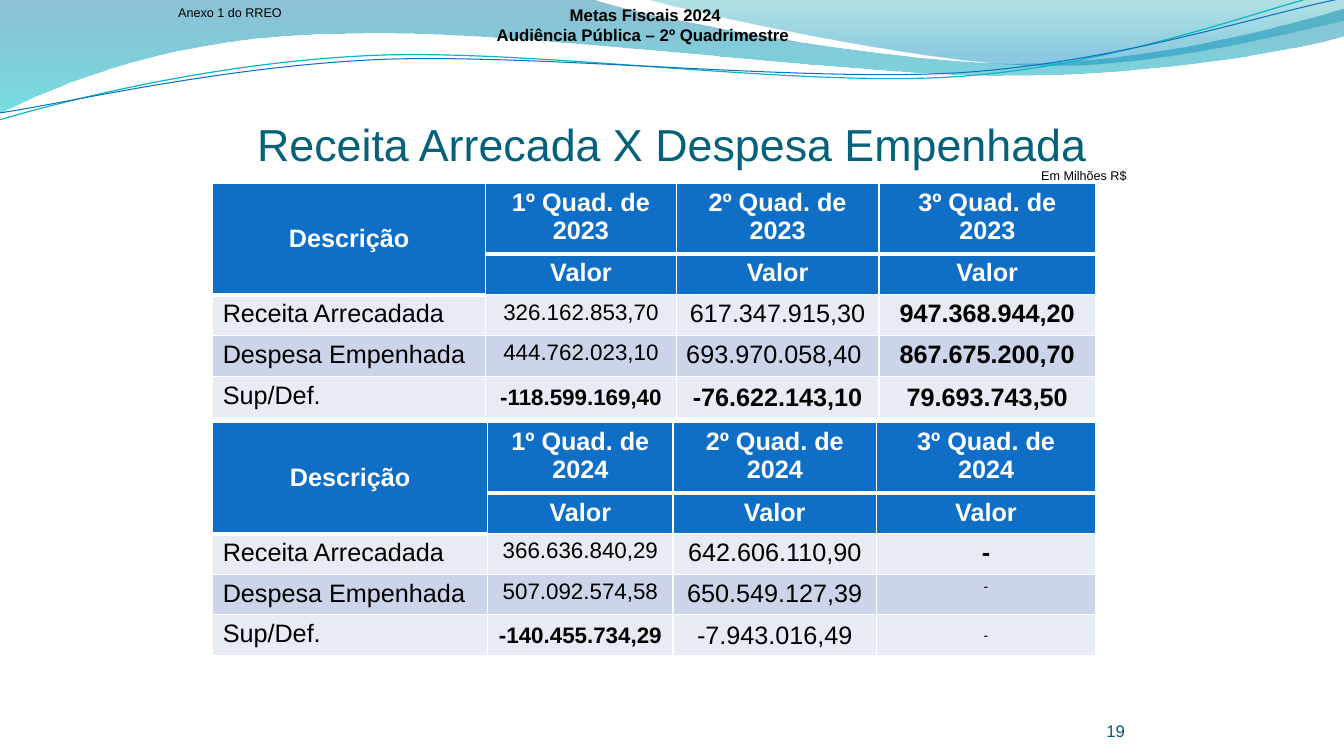
from lxml import etree
from pptx import Presentation
from pptx.dml.color import RGBColor
from pptx.enum.text import MSO_ANCHOR, MSO_AUTO_SIZE, PP_ALIGN
from pptx.oxml.ns import qn
from pptx.util import Cm, Pt

LEFT, CENTER, RIGHT = PP_ALIGN.LEFT, PP_ALIGN.CENTER, PP_ALIGN.RIGHT
TOP, MIDDLE, BOTTOM = MSO_ANCHOR.TOP, MSO_ANCHOR.MIDDLE, MSO_ANCHOR.BOTTOM
COLORS = {
    "header": "0F6FC6", "light": "E7EBF4", "band": "CCD4EA", "white": "FFFFFF",
    "black": "000000", "title": "04617B", "number": "035C75",
    "deep blue": "0074A0", "cyan": "00C4CD", "sky blue": "008ABF", "teal": "00A0A8",
    "turquoise": "09B7BF",
}
FONT = "Arial"
CM_PER_INCH = 2.54  # wave points are in inches


def write_text(frame, lines, size, color, bold=False, align=LEFT, anchor=TOP):
    frame.text = "\n".join(lines)
    frame.vertical_anchor = anchor
    for paragraph in frame.paragraphs:
        paragraph.alignment = align
        font = paragraph.font
        font.name, font.size, font.bold = FONT, Pt(size), bold
        font.color.rgb = RGBColor.from_string(COLORS[color])


def draw_wave(segments, close):
    """Draw segments of one point (line) or three points (Bézier curve)."""
    start, *points = [tuple(Cm(value * CM_PER_INCH) for value in point)
                      for segment in segments for point in segment]
    builder = slide.shapes.build_freeform(*start, scale=1.0)
    builder.add_line_segments(points, close=close)
    shape = builder.convert_to_shape()
    shape.shadow.inherit = False
    # Join each group of three line ends into one curve
    lines = iter(list(shape._element.iter(qn("a:lnTo"))))
    for segment in segments[1:]:
        first, *others = [next(lines) for _ in segment]
        if others:
            first.tag = qn("a:cubicBezTo")
            for line in others:
                first.append(line[0])
                line.getparent().remove(line)
    return shape


presentation = Presentation()
presentation.slide_width, presentation.slide_height = Cm(33.87), Cm(19.05)
slide = presentation.slides.add_slide(presentation.slide_layouts[5])

# Filled waves: outline, gradient angle, stops (position, colour, opacity %)
filled_waves = [
    ([[(0, 0)], [(5.87, -0.01)],
      [(6.34, 0.17), (8.85, 0.63), (10.11, 0.63)],
      [(11.37, 0.63), (12.78, 0.26), (13.33, 0.09)], [(13.35, 0.36)],
      [(13.11, 0.44), (11.6, 0.76), (9.94, 0.75)],
      [(8.29, 0.75), (5.09, 0.28), (3.43, 0.34)],
      [(1.72, 0.35), (0.61, 0.83), (-0.01, 1.13)]],
     270, [(0, "deep blue", 45), (1, "cyan", 55)]),
    ([[(6.39, -0.01)],
      [(6.79, 0.11), (9.09, 0.62), (10.25, 0.65)],
      [(11.41, 0.69), (12.82, 0.32), (13.33, 0.21)], [(13.33, 0)]],
     90, [(0.2, "sky blue", 45), (1, "teal", 30)]),
]
for segments, angle, stops in filled_waves:
    wave = draw_wave(segments, close=True)
    wave.line.fill.background()
    wave.fill.gradient()
    wave.fill.gradient_angle = angle
    for stop, (position, color, _) in zip(wave.fill.gradient_stops, stops):
        stop.position = position
        stop.color.rgb = RGBColor.from_string(COLORS[color])
    stop_colors = list(wave._element.spPr.iter(qn("a:srgbClr")))
    for element, (_, _, opacity) in zip(stop_colors, stops):
        etree.SubElement(element, qn("a:alpha"), val=str(opacity * 1000))

# Thin wave lines
wave_lines = [
    ([[(-0.01, 1.19)],
      [(0.64, 1), (2.11, 0.62), (3.69, 0.55)],
      [(5.27, 0.48), (7.9, 0.87), (9.5, 0.76)],
      [(11.1, 0.65), (12.52, 0.08), (13.31, -0.1)]], "turquoise", 0.85),
    ([[(0, 1.12)],
      [(0.63, 1.03), (2.18, 0.66), (3.78, 0.59)],
      [(5.37, 0.53), (7.96, 0.82), (9.55, 0.72)],
      [(11.15, 0.61), (12.55, 0.13), (13.34, -0.02)]], "header", 0.75),
]
for segments, color, width in wave_lines:
    wave = draw_wave(segments, close=False)
    wave.fill.background()
    wave.line.color.rgb = RGBColor.from_string(COLORS[color])
    wave.line.width = Pt(width)

# Title
title = slide.shapes.title
title.left, title.top, title.width, title.height = Cm(5.51), Cm(1.96), Cm(22.86), Cm(3.18)
frame = title.text_frame
frame.word_wrap, frame.auto_size = True, MSO_AUTO_SIZE.NONE
frame.margin_left = frame.margin_right = frame.margin_bottom = 0
write_text(frame, ["Receita Arrecada X Despesa Empenhada"], 32, "title",
           align=CENTER, anchor=MIDDLE)

# Small texts: box, lines, size, colour, bold, alignment, anchor
small_texts = [
    ((25.98, 4.11, 2.67, 0.64), ["Em Milhões R$"], 9, "black", False, CENTER, TOP),
    ((4.24, 0, 3.45, 0.64), ["Anexo 1 do RREO"], 9, "black", False, LEFT, TOP),
    ((11.96, 0, 8.61, 1.27), ["Metas Fiscais 2024", "Audiência Pública – 2º Quadrimestre "],
     12, "black", True, CENTER, MIDDLE),
    ((26.24, 17.65, 2.11, 1.02), ["19"], 12, "number", False, RIGHT, BOTTOM),
]
for box, lines, *style in small_texts:
    frame = slide.shapes.add_textbox(*map(Cm, box)).text_frame
    frame.word_wrap = True
    write_text(frame, lines, *style)
# The slide number, last in the list, has no margins
frame.margin_left = frame.margin_right = frame.margin_top = frame.margin_bottom = 0

# Tables: year, top, row height, column widths, values (text, size, bold)
tables = [
    (2023, 4.62, 1.03, (6.88, 4.8, 5.11, 5.46), [
        [("326.162.853,70", 16, False), ("617.347.915,30", 18, False), ("947.368.944,20", 18, True)],
        [("444.762.023,10", 16, False), ("693.970.058,40", 18, False), ("867.675.200,70", 18, True)],
        [("-118.599.169,40", 16, True), ("-76.622.143,10", 18, True), ("79.693.743,50", 18, True)],
    ]),
    (2024, 10.65, 1.02, (6.93, 4.67, 5.13, 5.52), [
        [("366.636.840,29", 16, False), ("642.606.110,90", 18, False), ("-", 18, True)],
        [("507.092.574,58", 16, False), ("650.549.127,39", 18, False), ("-", 10, False)],
        [("-140.455.734,29", 16, True), ("-7.943.016,49", 18, False), ("-", 10, False)],
    ]),
]
labels = ["Receita Arrecadada", "Despesa Empenhada", "Sup/Def."]
HEADER_HEIGHT = 1.75
for year, top, row_height, widths, values in tables:
    heights = [HEADER_HEIGHT] + [row_height] * 4
    table = slide.shapes.add_table(5, 4, Cm(5.36), Cm(top), Cm(sum(widths)),
                                   Cm(sum(heights))).table
    table.first_row = table.horz_banding = False
    for column, width in zip(table.columns, widths):
        column.width = Cm(width)
    for row, height in zip(table.rows, heights):
        row.height = Cm(height)
    table.cell(0, 0).merge(table.cell(1, 0))

    quarters = [(f"{number}º Quad. de {year}", 18, True) for number in (1, 2, 3)]
    rows = [[("Descrição", 18, True)] + quarters, [("", 18, True)] + [("Valor", 18, True)] * 3]
    rows += [[(label, 18, False)] + row for label, row in zip(labels, values)]
    for r, row in enumerate(rows):
        for c, (text, size, bold) in enumerate(row):
            cell = table.cell(r, c)
            # White borders, thick under the header cells
            thick_top = r == (2 if c == 0 else 1)
            thick_bottom = r == 0 or (r == 1 and c == 0)
            for side, thick in (("L", False), ("R", False), ("T", thick_top), ("B", thick_bottom)):
                border = etree.SubElement(cell._tc.get_or_add_tcPr(), qn("a:ln" + side),
                                          w=str(Pt(3 if thick else 0.96)))
                fill = etree.SubElement(border, qn("a:solidFill"))
                etree.SubElement(fill, qn("a:srgbClr"), val=COLORS["white"])
            cell.fill.solid()
            fill_color = "header" if r < 2 else "band" if r == 3 else "light"
            cell.fill.fore_color.rgb = RGBColor.from_string(COLORS[fill_color])
            if text:
                left_aligned = (r > 1 and c == 0) or text == "693.970.058,40"
                write_text(cell.text_frame, [text], size, "white" if r < 2 else "black", bold,
                           LEFT if left_aligned else CENTER)
            balance_value = r == 4 and c > 0
            cell.vertical_anchor = MIDDLE if balance_value or (r, c) == (0, 0) else TOP
            if balance_value:
                cell.margin_left = cell.margin_right = cell.margin_top = Cm(0.03)
                cell.margin_bottom = 0

presentation.save("out.pptx")
